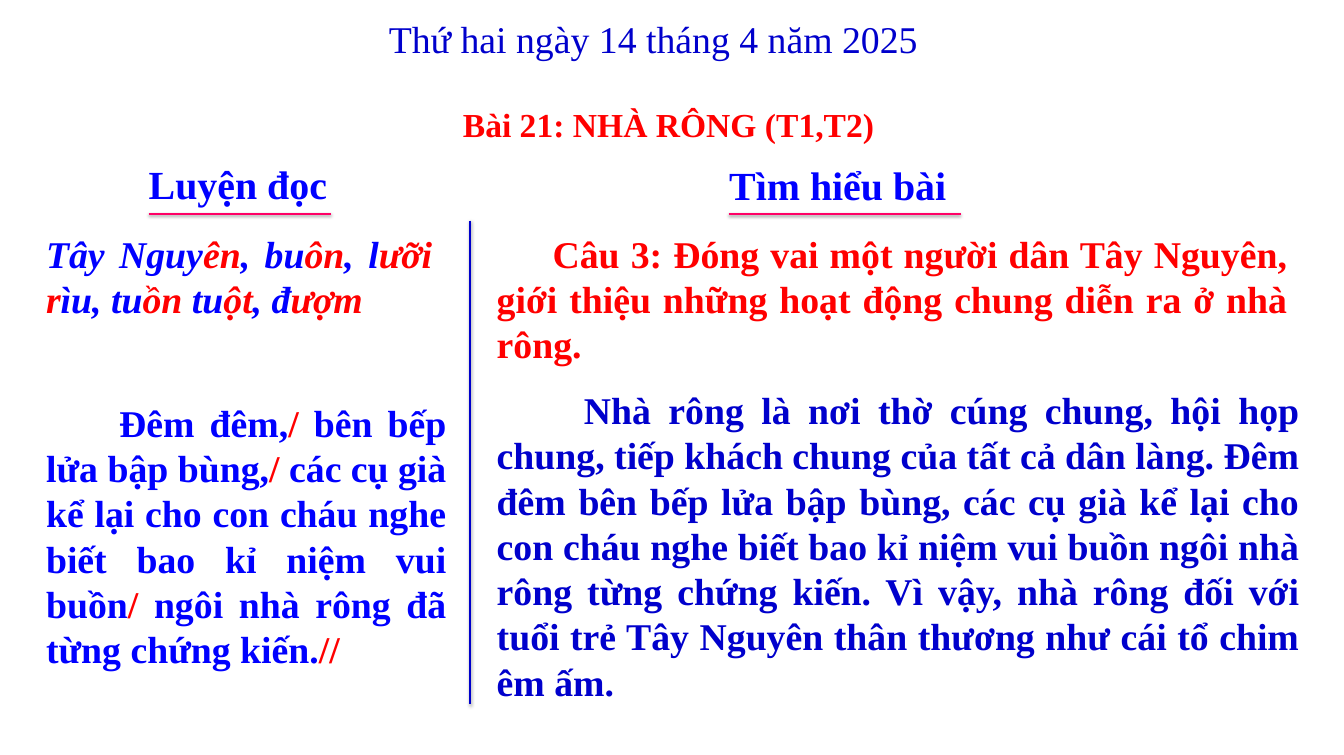
"""Build the reading-lesson slide "Nhà rông" with two columns of notes."""
from lxml.etree import SubElement
from pptx import Presentation
from pptx.dml.color import RGBColor
from pptx.enum.shapes import MSO_CONNECTOR as Connector
from pptx.enum.text import MSO_ANCHOR as Anchor, MSO_AUTO_SIZE as AutoSize, PP_ALIGN as Align
from pptx.oxml.ns import qn
from pptx.util import Cm, Pt

FONT = "Times New Roman"
BLUE, NAVY, RED, PINK = "0000FF", "0000CC", "FF0000", "FF0066"
LEFT_X, RIGHT_X, BODY_Y = 1.3, 16.46, 7.62

DATE = "Thứ hai ngày 14 tháng 4 năm 2025"
LESSON = "Bài 21: NHÀ RÔNG (T1,T2)"
HEADINGS = [
    ("Luyện đọc", (4.78, 5.26, 6.45, 1.83)),
    ("Tìm hiểu bài", (24.31, 5.31, 7.75, 1.83)),
]
WORDS = ["Tây Nguy", "ên", ", bu", "ôn", ", l", "ưỡi r", "ìu, tu", "ồn", " tu", "ột", ", đ", "ượm"]
PAUSES = ["Đêm đêm,", "/", " bên bếp lửa bập bùng,", "/",
          " các cụ già kể lại cho con cháu nghe biết bao kỉ niệm vui buồn", "/",
          " ngôi nhà rông đã từng chứng kiến.", "//"]
QUESTION = ["Câu 3: Đóng vai một người dân Tây Nguyên, giới thiệu những hoạt động chung "
            "diễn ra ở nhà rông."]
ANSWER = ["Nhà rông là nơi thờ cúng chung, hội họp chung, tiếp khách chung của tất cả dân làng. "
          "Đêm đêm bên bếp lửa bập bùng, các cụ già kể lại cho con cháu nghe biết bao kỉ niệm "
          "vui buồn ngôi nhà rông từng chứng kiến. Vì vậy, nhà rông đối với tuổi trẻ Tây Nguyên "
          "thân thương như cái tổ chim êm ấm."]
BODIES = [
    (WORDS, (LEFT_X, BODY_Y, 13.49, 3.33), (BLUE, RED), 0, True),
    (PAUSES, (LEFT_X, 13.31, 13.97, 9.5), (BLUE, RED), 2.46, False),
    (QUESTION, (RIGHT_X, BODY_Y, 27.1, 4.88), (RED,), 1.88, False),
    (ANSWER, (RIGHT_X, 12.88, 27.51, 11.02), (NAVY,), 2.93, False),
]
RULES = [
    ((15.82, 7.42, 15.82, 23.7), NAVY),
    ((5, 7.2, 11.13, 7.2), PINK),
    ((24.51, 7.2, 32.31, 7.2), PINK),
]


def rgb(value):
    return RGBColor.from_string(value)


def write(sp, box, parts, colors, size, align, bold=True, italic=False, wrap=True,
          indent=0, insets=(0.25, 0.13)):
    sp.left, sp.top, sp.width, sp.height = map(Cm, box)
    tf = sp.text_frame
    tf.word_wrap, tf.auto_size, tf.vertical_anchor = wrap, AutoSize.NONE, Anchor.TOP
    tf.margin_left = tf.margin_right = Cm(insets[0])
    tf.margin_top = tf.margin_bottom = Cm(insets[1])
    p = tf.paragraphs[0]
    p.alignment = align
    if indent:
        p._p.get_or_add_pPr().set("indent", str(Cm(indent)))
    p.font.name, p.font.size, p.font.bold, p.font.italic = FONT, Pt(size), bold, italic
    for i, part in enumerate(parts):
        r = p.add_run()
        r.text = part
        r.font.color.rgb = rgb(colors[i % len(colors)])


def add_rule(s, ends, color):
    line = s.shapes.add_connector(Connector.STRAIGHT, *map(Cm, ends))
    line.line.color.rgb, line.line.width = rgb(color), Pt(2)
    effects = SubElement(line._element.spPr, qn("a:effectLst"))
    shadow = SubElement(effects, qn("a:outerShdw"), blurRad=str(Pt(3.1)), dist=str(Pt(1.6)),
                        dir="5400000", rotWithShape="0")
    black = SubElement(shadow, qn("a:srgbClr"), val="000000")
    SubElement(black, qn("a:alpha"), val="38000")


def main():
    prs = Presentation()
    prs.slide_width, prs.slide_height = Cm(45.21), Cm(25.4)
    s = prs.slides.add_slide(prs.slide_layouts[5])

    def textbox():
        return s.shapes.add_textbox(0, 0, 0, 0)

    write(s.shapes.title, (12.65, 3.3, 19.69, 1.78), [LESSON], (RED,), 32, Align.CENTER,
          insets=(0.4, 0.2))
    write(textbox(), (12.83, 0.41, 18.49, 1.8), [DATE], (NAVY,), 36, Align.LEFT,
          bold=False, wrap=False)
    for text, box in HEADINGS:
        write(textbox(), box, [text], (BLUE,), 38, Align.CENTER, wrap=False, insets=(0.2, 0.1))
    for parts, box, colors, indent, italic in BODIES:
        write(textbox(), box, parts, colors, 36, Align.JUSTIFY, italic=italic, indent=indent)
    for ends, color in RULES:
        add_rule(s, ends, color)
    prs.save("out.pptx")


if __name__ == "__main__":
    main()
